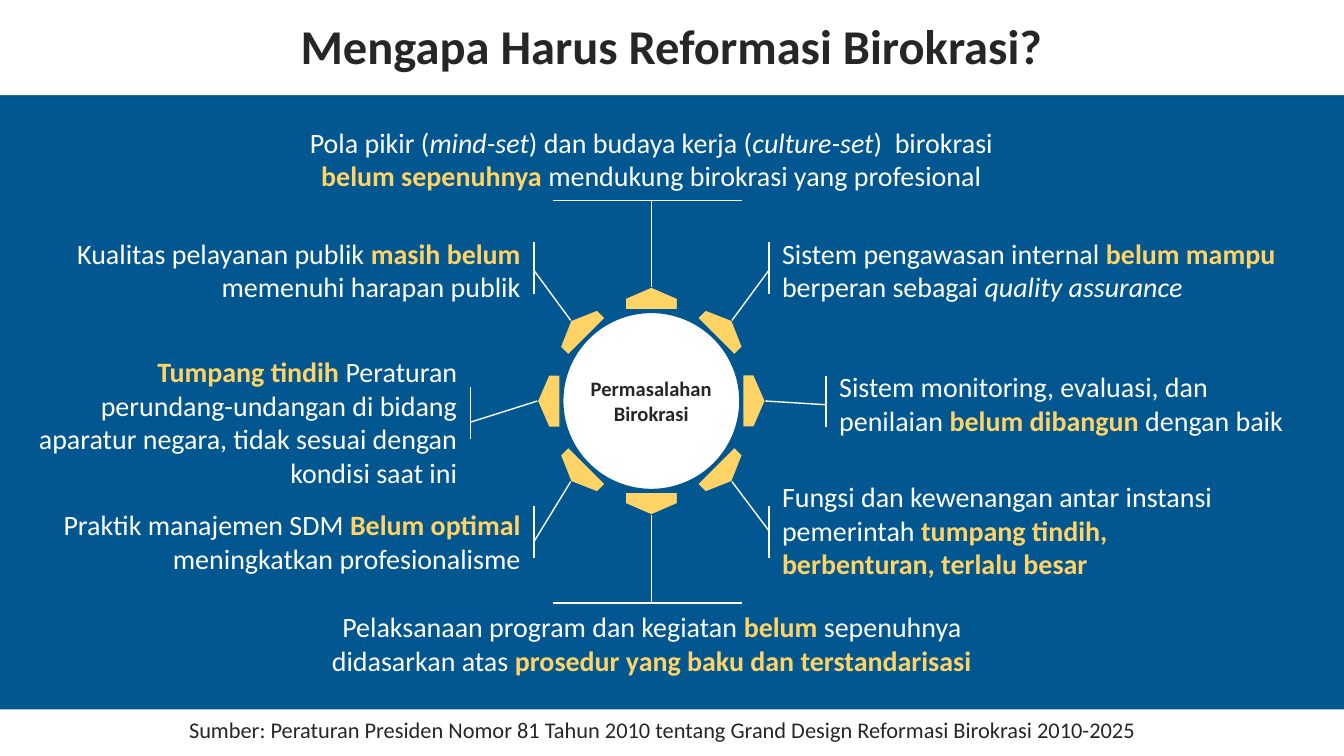
from dataclasses import dataclass
from math import cos, radians, sin

from lxml import etree
from pptx import Presentation
from pptx.dml.color import RGBColor
from pptx.enum import shapes, text
from pptx.oxml.ns import qn
from pptx.util import Cm, Pt

SHAPE = shapes.MSO_SHAPE
ALIGN = text.PP_ALIGN


@dataclass(frozen=True)
class Theme:
    blue: str = "025790"
    gold: str = "FFD365"
    white: str = "FFFFFF"
    dark: str = "262626"
    font: str = "Calibri"
    title: float = 26
    body: float = 15
    source: float = 12
    hub: float = 11


T = Theme()
WIDE, HIGH = 25.4, 14.29
HEAD, FOOT = 1.8, 0.88
HUB_X, HUB_Y, HUB_R = 12.31, 7.58, 1.74
PETAL_W, PETAL_H, RING = 0.99, 0.43, 1.94
BAR_X, BAR_W, BAR_H = 12.24, 3.56, 0.98

# angle, text box, bar middle, end of the spoke, wording
# Bar and spoke heights count for the side notes only.
# *gold bold*, _italic_
NOTES = [
    (0, (5.26, 2.24, 14.1, 1.55), None, None,
     "Pola pikir (_mind-set_) dan budaya kerja (_culture-set_)  birokrasi "
     "*belum sepenuhnya *mendukung birokrasi yang profesional"),
    (45, (14.53, 4.34, 9.98, 1.55), 5.07, 5.11,
     "Sistem pengawasan internal *belum mampu *berperan sebagai "
     "_quality assurance_"),
    (90, (15.61, 6.86, 9.14, 1.55), 7.59, 7.65,
     "Sistem monitoring, evaluasi, dan penilaian *belum dibangun *"
     "dengan baik"),
    (135, (14.53, 8.94, 9.63, 2.18), 10.05, 10.03,
     "Fungsi dan kewenangan antar instansi pemerintah "
     "*tumpang tindih, berbenturan, terlalu besar*"),
    (180, (5.97, 11.4, 12.7, 1.55), None, None,
     "Pelaksanaan program dan kegiatan *belum *sepenuhnya didasarkan atas "
     "*prosedur yang baku dan terstandarisasi*"),
    (225, (0.46, 9.47, 9.63, 1.55), 10.05, 10.24,
     "Praktik manajemen SDM *Belum optimal *meningkatkan profesionalisme"),
    (270, (0.18, 6.58, 8.71, 2.82), 7.81, 7.98,
     "*Tumpang tindih *Peraturan perundang-undangan di bidang aparatur "
     "negara, tidak sesuai dengan kondisi saat ini"),
    (315, (0.46, 4.34, 9.63, 1.55), 5.07, 5.11,
     "Kualitas pelayanan publik *masih belum *memenuhi harapan publik"),
]


def style(font, size, tint, bold=False, slant=False):
    font.name, font.size = T.font, Pt(size)
    font.bold, font.italic = bold, slant
    font.color.rgb = RGBColor.from_string(tint)


def add_form(slide, kind, box, fill, edge=0):
    form = slide.shapes.add_shape(kind, *map(Cm, box))
    form.shadow.inherit = False
    form.fill.solid()
    form.fill.fore_color.rgb = RGBColor.from_string(fill)
    if edge:
        form.line.color.rgb = RGBColor.from_string(T.blue)
        form.line.width = Pt(edge)
    else:
        form.line.fill.background()
    return form


def add_line(slide, start, end):
    line = slide.shapes.add_connector(
        shapes.MSO_CONNECTOR.STRAIGHT, *map(Cm, start + end))
    line.line.color.rgb = RGBColor.from_string(T.white)
    line.line.width = Pt(0.75)
    props = line._element.spPr
    etree.SubElement(props, qn("a:effectLst"))


def add_text(slide, box, words, align, size, tint, bold=False):
    """Add a text box; *...* is gold and bold, _..._ is italic."""
    frame = slide.shapes.add_textbox(*map(Cm, box)).text_frame
    frame.word_wrap = True
    frame.auto_size = text.MSO_AUTO_SIZE.SHAPE_TO_FIT_TEXT
    para = frame.paragraphs[0]
    para.alignment = align
    for i, part in enumerate(words.split("*")):
        gold = i % 2 == 1
        for j, piece in enumerate(part.split("_")):
            if piece:
                run = para.add_run()
                run.text = piece
                style(run.font, size, T.gold if gold else tint,
                      bold or gold, j % 2 == 1)


def add_hub(slide, x, y, r):
    hub = add_form(slide, SHAPE.OVAL, (x - r, y - r, 2 * r, 2 * r),
                   T.white, 4.5)
    frame = hub.text_frame
    frame.word_wrap = True
    frame.margin_left = frame.margin_right = 0
    frame.vertical_anchor = text.MSO_ANCHOR.MIDDLE
    frame.text = "Permasalahan Birokrasi"
    para = frame.paragraphs[0]
    para.alignment = ALIGN.CENTER
    style(para.runs[0].font, T.hub, T.dark, True)


def polar(angle, r):
    """Point at a clockwise angle from the top of the hub."""
    turn = radians(angle)
    return HUB_X + r * sin(turn), HUB_Y - r * cos(turn)


def add_petal(slide, angle):
    x, y = polar(angle, RING)
    box = (x - PETAL_W / 2, y - PETAL_H / 2, PETAL_W, PETAL_H)
    petal = add_form(slide, SHAPE.UP_ARROW, box, T.gold, 0.75)
    petal.adjustments[0], petal.adjustments[1] = 1, 0.5
    petal.rotation = angle


def add_note(slide, angle, box, mid, joint, words):
    """Add one issue with its bar and the spoke that joins it to the hub."""
    left, top, width, height = box
    if angle % 180 == 0:
        align = ALIGN.CENTER
        y = top if angle else top + height
        bar = (BAR_X - BAR_W / 2, y), (BAR_X + BAR_W / 2, y)
        end = (HUB_X, y)
    else:
        right = angle < 180
        align = ALIGN.LEFT if right else ALIGN.RIGHT
        x = left if right else left + width
        bar = (x, mid - BAR_H / 2), (x, mid + BAR_H / 2)
        end = (x, joint)
    add_text(slide, box, words, align, T.body, T.white)
    add_line(slide, polar(angle, RING + PETAL_H / 2), end)
    add_line(slide, *bar)


def add_band(slide, box, area, words, size, bold=False):
    add_form(slide, SHAPE.RECTANGLE, box, T.white)
    add_text(slide, area, words, ALIGN.CENTER, size, T.dark, bold)


def main():
    deck = Presentation()
    deck.slide_width, deck.slide_height = Cm(WIDE), Cm(HIGH)
    slide = deck.slides.add_slide(deck.slide_layouts[6])
    add_form(slide, SHAPE.RECTANGLE, (0, 0, WIDE, HIGH), T.blue)
    add_hub(slide, HUB_X, HUB_Y, HUB_R)
    for note in NOTES:
        add_petal(slide, note[0])
        add_note(slide, *note)
    foot = HIGH - FOOT
    add_band(slide, (0, foot, WIDE, FOOT), (0.18, foot, 24.69, 0.76),
             "Sumber: Peraturan Presiden Nomor 81 Tahun 2010 tentang "
             "Grand Design Reformasi Birokrasi 2010-2025", T.source)
    add_band(slide, (0, 0, WIDE, HEAD), (3, 0.18, 19.4, 1.37),
             "Mengapa Harus Reformasi Birokrasi?", T.title, True)
    deck.save("out.pptx")


if __name__ == "__main__":
    main()
